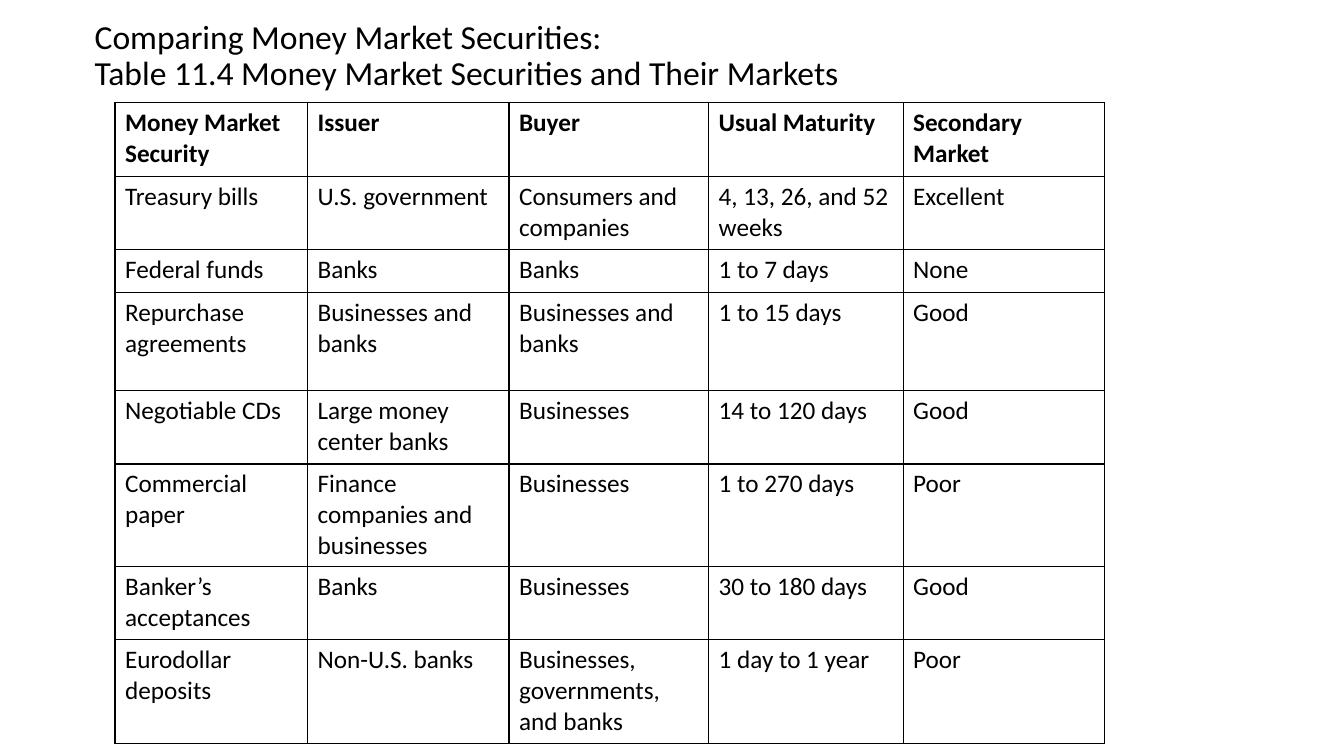
from pptx import Presentation
from pptx.dml.color import RGBColor
from pptx.enum.text import MSO_ANCHOR, PP_ALIGN
from pptx.oxml import parse_xml
from pptx.oxml.ns import nsdecls
from pptx.util import Cm, Pt

BLACK = "000000"


def style(para, size, bold=False):
    para.alignment = PP_ALIGN.LEFT
    for run in para.runs:
        font = run.font
        font.name = "Calibri"
        font.size = Pt(size)
        font.bold = bold
        font.color.rgb = RGBColor.from_string(BLACK)


def border(cell):
    """Draw a thin black line on all four sides of a cell."""
    props = cell._tc.get_or_add_tcPr()
    for place, side in enumerate(("lnL", "lnR", "lnT", "lnB")):
        line = parse_xml(
            f'<a:{side} {nsdecls("a")} w="{Pt(1)}"><a:solidFill>'
            f'<a:srgbClr val="{BLACK}"/></a:solidFill></a:{side}>'
        )
        props.insert(place, line)


deck = Presentation()
deck.slide_width = Cm(33.87)
deck.slide_height = Cm(19.05)
slide = deck.slides.add_slide(deck.slide_layouts[5])

# Title
title = slide.shapes.title
title.left, title.top = Cm(2.13), Cm(0.25)
title.width, title.height = Cm(29.21), Cm(2.34)
frame = title.text_frame
frame.word_wrap = True
frame.vertical_anchor = MSO_ANCHOR.MIDDLE
head = frame.paragraphs[0]
head.text = (
    "Comparing Money Market Securities:\n"
    "Table 11.4 Money Market Securities and Their Markets"
)
head.line_spacing = 0.9
style(head, 24)

# Table
rows = [
    ("Money Market Security", "Issuer", "Buyer", "Usual Maturity", "Secondary Market"),
    ("Treasury bills", "U.S. government", "Consumers and companies",
     "4, 13, 26, and 52 weeks", "Excellent"),
    ("Federal funds", "Banks", "Banks", "1 to 7 days", "None"),
    ("Repurchase agreements", "Businesses and banks", "Businesses and banks",
     "1 to 15 days", "Good"),
    ("Negotiable CDs", "Large money center banks", "Businesses", "14 to 120 days", "Good"),
    ("Commercial paper", "Finance companies and businesses", "Businesses",
     "1 to 270 days", "Poor"),
    ("Banker’s acceptances", "Banks", "Businesses", "30 to 180 days", "Good"),
    ("Eurodollar deposits", "Non-U.S. banks", "Businesses, governments, and banks",
     "1 day to 1 year", "Poor"),
]
widths = [4.85, 5.08, 5.03, 4.9, 5.08]
heights = [1.85, 1.85, 1.09, 2.46, 1.85, 2.29, 1.85, 2.62]

table = slide.shapes.add_table(
    len(rows), len(widths), Cm(2.9), Cm(2.59), Cm(sum(widths)), Cm(sum(heights))
).table
table.horz_banding = False
for col, width in zip(table.columns, widths):
    col.width = Cm(width)
for row, height in zip(table.rows, heights):
    row.height = Cm(height)

for r, texts in enumerate(rows):
    for c, text in enumerate(texts):
        cell = table.cell(r, c)
        cell.fill.background()
        border(cell)
        cell.text_frame.text = text
        style(cell.text_frame.paragraphs[0], 18, bold=r == 0)

deck.save("out.pptx")
